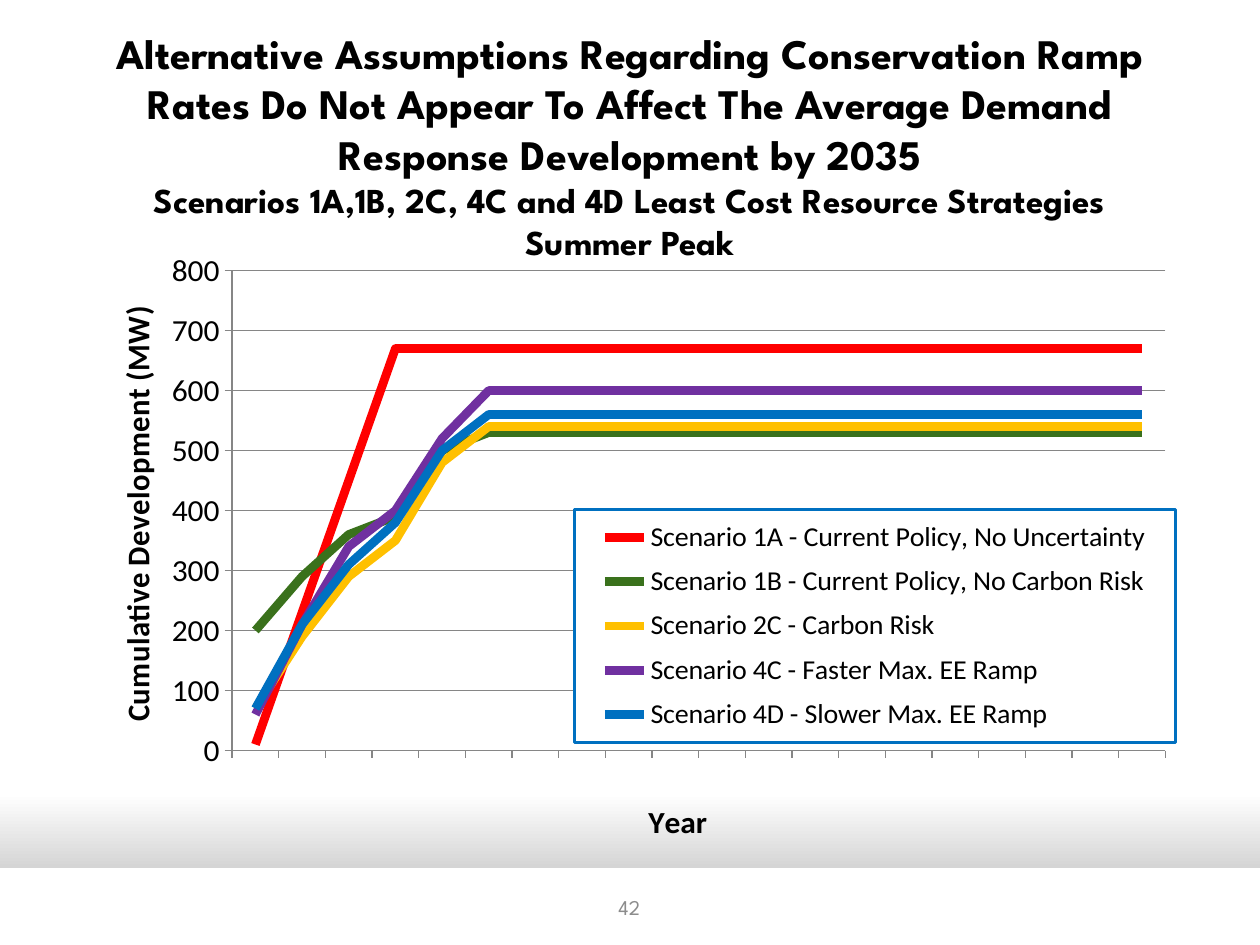
from dataclasses import dataclass

from lxml import etree
from pptx import Presentation
from pptx.chart.data import CategoryChartData
from pptx.dml.color import RGBColor
from pptx.enum import chart as charts, shapes, text
from pptx.oxml.ns import qn
from pptx.util import Inches, Pt


@dataclass(frozen=True)
class Theme:
    heading_font: str = "League Spartan"
    body_font: str = "Calibri"
    black: str = "000000"
    white: str = "FFFFFF"
    shade: str = "A6A6A6"
    muted: str = "8C8C8C"
    grid: str = "868686"
    accent: str = "0070C0"
    title_size: int = 24
    subtitle_size: int = 20
    axis_size: int = 18
    legend_size: int = 16
    number_size: int = 12
    series_width: float = 5


@dataclass(frozen=True)
class Box:
    left: float
    top: float
    width: float
    height: float

    def lengths(self):
        return [Inches(value) for value in (self.left, self.top, self.width, self.height)]


@dataclass(frozen=True)
class Scenario:
    name: str
    color: str
    ramp: tuple[int, ...]

    def values(self, count: int) -> list[int]:
        """Hold the last ramp value for the remaining years."""
        return list(self.ramp) + [self.ramp[-1]] * (count - len(self.ramp))


THEME = Theme()
YEARS = [str(year) for year in range(2016, 2036)]
SCENARIOS = [
    Scenario("Scenario 1A - Current Policy, No Uncertainty", "FF0000", (10, 230, 450, 670)),
    Scenario("Scenario 1B - Current Policy, No Carbon Risk", "3A711C",
             (200, 290, 360, 390, 500, 530)),
    Scenario("Scenario 2C - Carbon Risk", "FFC000", (70, 190, 290, 350, 480, 540)),
    Scenario("Scenario 4C - Faster Max. EE Ramp", "7030A0", (60, 210, 340, 400, 520, 600)),
    Scenario("Scenario 4D - Slower Max. EE Ramp", "0070C0", (70, 210, 310, 380, 500, 560)),
]


def rgb(color: str) -> RGBColor:
    return RGBColor.from_string(color)


def format_font(font, *, size: float, color: str = THEME.black,
                name: str = THEME.body_font, bold: bool = False) -> None:
    font.size = Pt(size)
    font.name = name
    font.bold = bold
    font.color.rgb = rgb(color)


def format_line(line, color: str, width: float) -> None:
    line.color.rgb = rgb(color)
    line.width = Pt(width)


def add_text(paragraph, content: str, **font_format) -> None:
    """Add text to a paragraph, with a line break at each newline."""
    for index, part in enumerate(content.split("\n")):
        if index:
            paragraph.add_line_break()
        if part:
            run = paragraph.add_run()
            run.text = part
            format_font(run.font, **font_format)


def add_centered_box(slide, box: Box):
    """Add a middle-anchored text box and return its centred paragraph."""
    frame = slide.shapes.add_textbox(*box.lengths()).text_frame
    frame.word_wrap = True
    frame.vertical_anchor = text.MSO_ANCHOR.MIDDLE
    paragraph = frame.paragraphs[0]
    paragraph.alignment = text.PP_ALIGN.CENTER
    return paragraph


def set_layout(parent, position: int, *, inner: bool = False, **fractions: float) -> None:
    """Place a chart part by fractions of the chart's size."""
    for old in parent.findall(qn("c:layout")):
        parent.remove(old)
    layout = etree.Element(qn("c:layout"))
    manual = etree.SubElement(layout, qn("c:manualLayout"))
    settings = {"layoutTarget": "inner"} if inner else {}
    settings |= {"xMode": "edge", "yMode": "edge"} | fractions
    for tag, value in settings.items():
        etree.SubElement(manual, qn(f"c:{tag}")).set("val", str(value))
    parent.insert(position, layout)


def format_axis(axis, title: str, x: float, y: float) -> None:
    axis.major_tick_mark = charts.XL_TICK_MARK.OUTSIDE
    axis.minor_tick_mark = charts.XL_TICK_MARK.NONE
    format_line(axis.format.line, THEME.grid, 0.75)
    format_font(axis.tick_labels.font, size=THEME.axis_size)
    add_text(axis.axis_title.text_frame.paragraphs[0], title, size=THEME.axis_size, bold=True)
    set_layout(axis.axis_title._element, 1, x=x, y=y)


def format_legend(chart) -> None:
    chart.has_legend = True
    legend = chart.legend
    legend.position = charts.XL_LEGEND_POSITION.RIGHT
    legend.include_in_layout = False
    format_font(legend.font, size=THEME.legend_size)
    set_layout(legend._element, 1, x=0.46, y=0.44, w=0.53, h=0.4)
    properties = legend._element.find(qn("c:spPr"))
    if properties is None:
        properties = etree.Element(qn("c:spPr"))
        legend._element.find(qn("c:txPr")).addprevious(properties)
    line = etree.Element(qn("a:ln"), w=str(Pt(2)))
    for parent, color in ((properties, THEME.white), (line, THEME.accent)):
        fill = etree.SubElement(parent, qn("a:solidFill"))
        etree.SubElement(fill, qn("a:srgbClr")).set("val", color)
    properties.append(line)


def add_development_chart(slide, box: Box) -> None:
    data = CategoryChartData()
    data.categories = YEARS
    for scenario in SCENARIOS:
        data.add_series(scenario.name, scenario.values(len(YEARS)))
    chart = slide.shapes.add_chart(charts.XL_CHART_TYPE.LINE, *box.lengths(), data).chart
    chart.has_title = False
    format_font(chart.font, size=THEME.axis_size)
    chart.plots[0].vary_by_categories = False
    for series, scenario in zip(chart.plots[0].series, SCENARIOS):
        series.smooth = False
        format_line(series.format.line, scenario.color, THEME.series_width)

    format_axis(chart.category_axis, "Year", 0.52, 0.93)
    chart.category_axis.tick_label_position = charts.XL_TICK_LABEL_POSITION.NONE
    value_axis = chart.value_axis
    format_axis(value_axis, "Cumulative Development (MW)", 0.05, 0.1)
    value_axis.minimum_scale, value_axis.maximum_scale, value_axis.major_unit = 0, 800, 100
    value_axis.has_major_gridlines = True
    format_line(value_axis.major_gridlines.format.line, THEME.grid, 0.75)
    format_legend(chart)
    plot_area = chart.plots[0]._element.getparent()
    set_layout(plot_area, 0, inner=True, x=0.158, y=0.03, w=0.823, h=0.824)


def add_background(slide) -> None:
    fill = slide.background.fill
    fill.gradient()
    fill.gradient_angle = 270
    for stop, position, color in zip(fill.gradient_stops, (0.84, 1), (THEME.white, THEME.shade)):
        stop.position = position
        stop.color.rgb = rgb(color)
    footer = slide.shapes.add_shape(shapes.MSO_SHAPE.RECTANGLE, *Box(0, 6.89, 10, 0.61).lengths())
    footer.shadow.inherit = False
    footer.fill.solid()
    footer.fill.fore_color.rgb = rgb(THEME.white)
    footer.line.fill.background()


def main() -> None:
    presentation = Presentation()
    presentation.slide_width, presentation.slide_height = Inches(10), Inches(7.5)
    slide = presentation.slides.add_slide(presentation.slide_layouts[6])
    add_background(slide)
    heading = add_centered_box(slide, Box(0.5, 0.3, 9, 1.7))
    add_text(heading, "Alternative Assumptions Regarding Conservation Ramp Rates Do Not Appear "
             "To Affect The Average Demand Response Development by 2035\n",
             size=THEME.title_size, name=THEME.heading_font, bold=True)
    add_text(heading, "Scenarios 1A,1B, 2C, 4C and 4D Least Cost Resource Strategies\nSummer Peak",
             size=THEME.subtitle_size, name=THEME.heading_font, bold=True)
    add_development_chart(slide, Box(0.42, 2, 9, 4.75))
    add_text(add_centered_box(slide, Box(3.83, 7, 2.33, 0.4)), "42",
             size=THEME.number_size, color=THEME.muted, name=THEME.heading_font)
    presentation.save("out.pptx")


if __name__ == "__main__":
    main()
